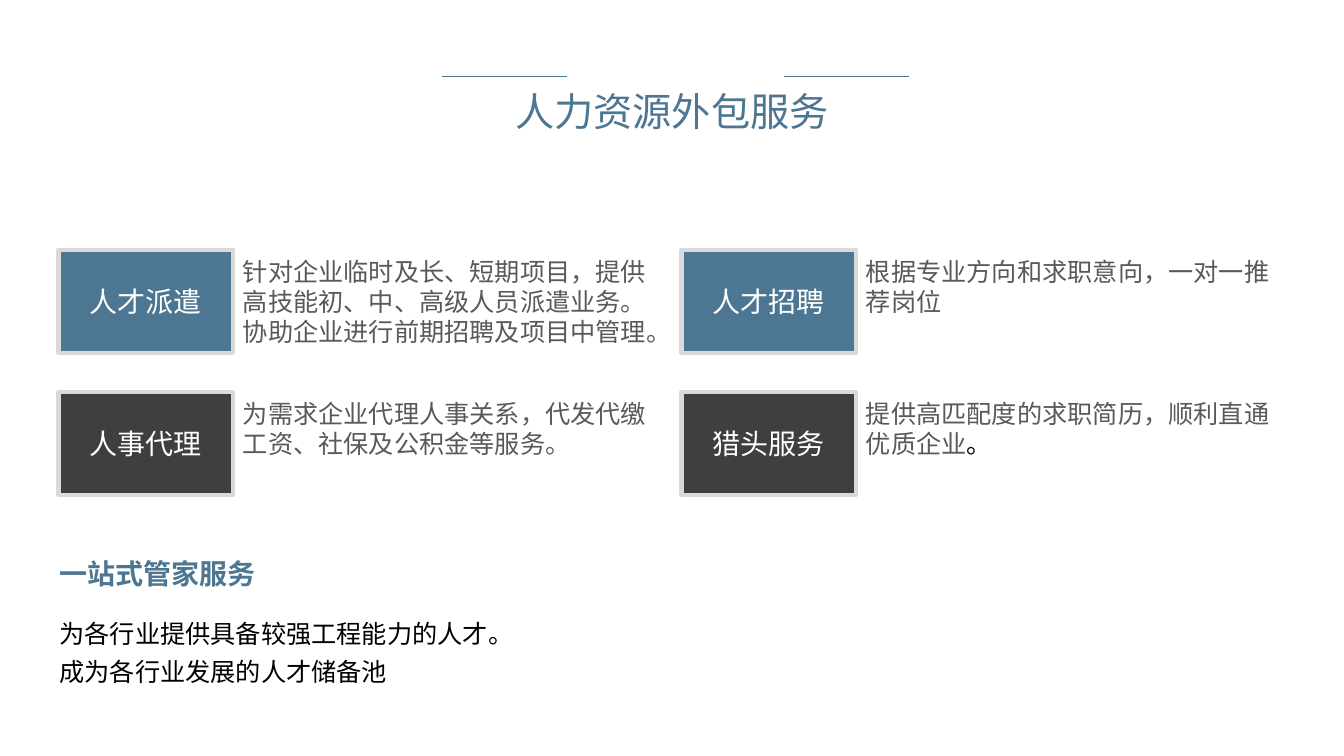
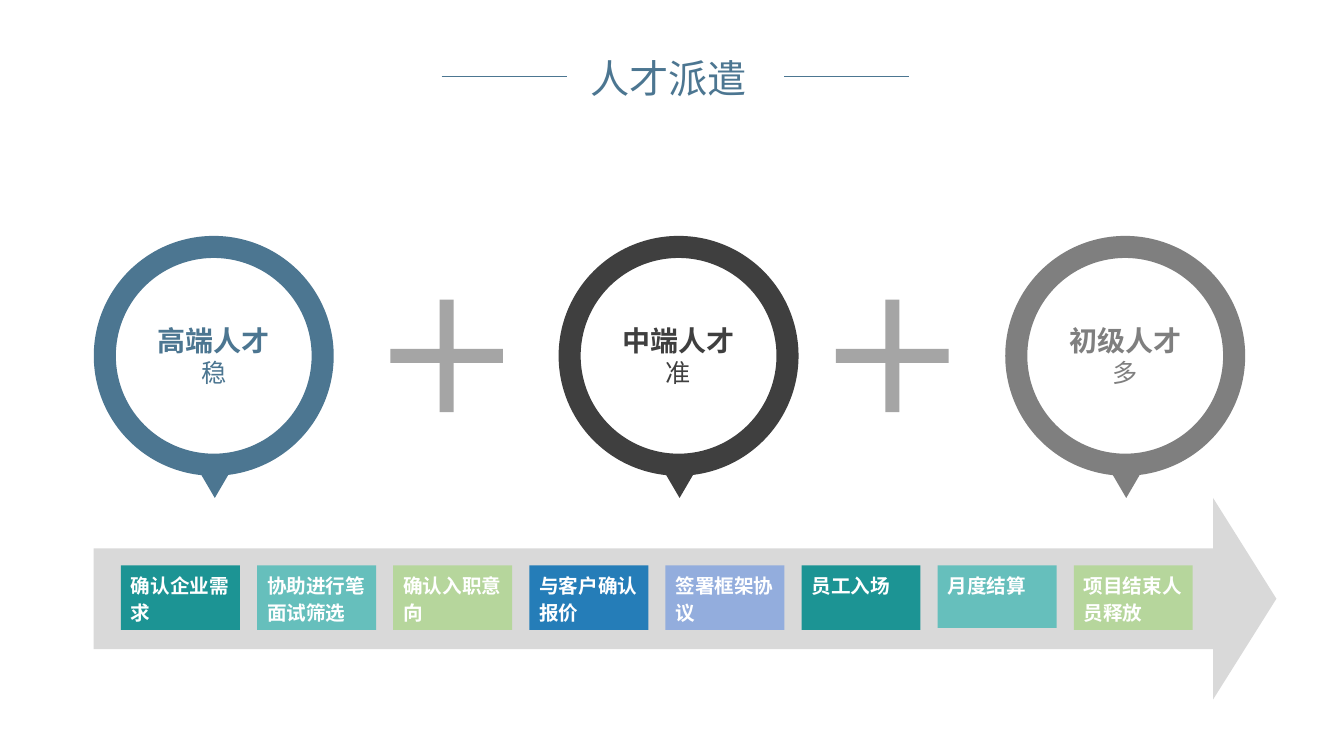
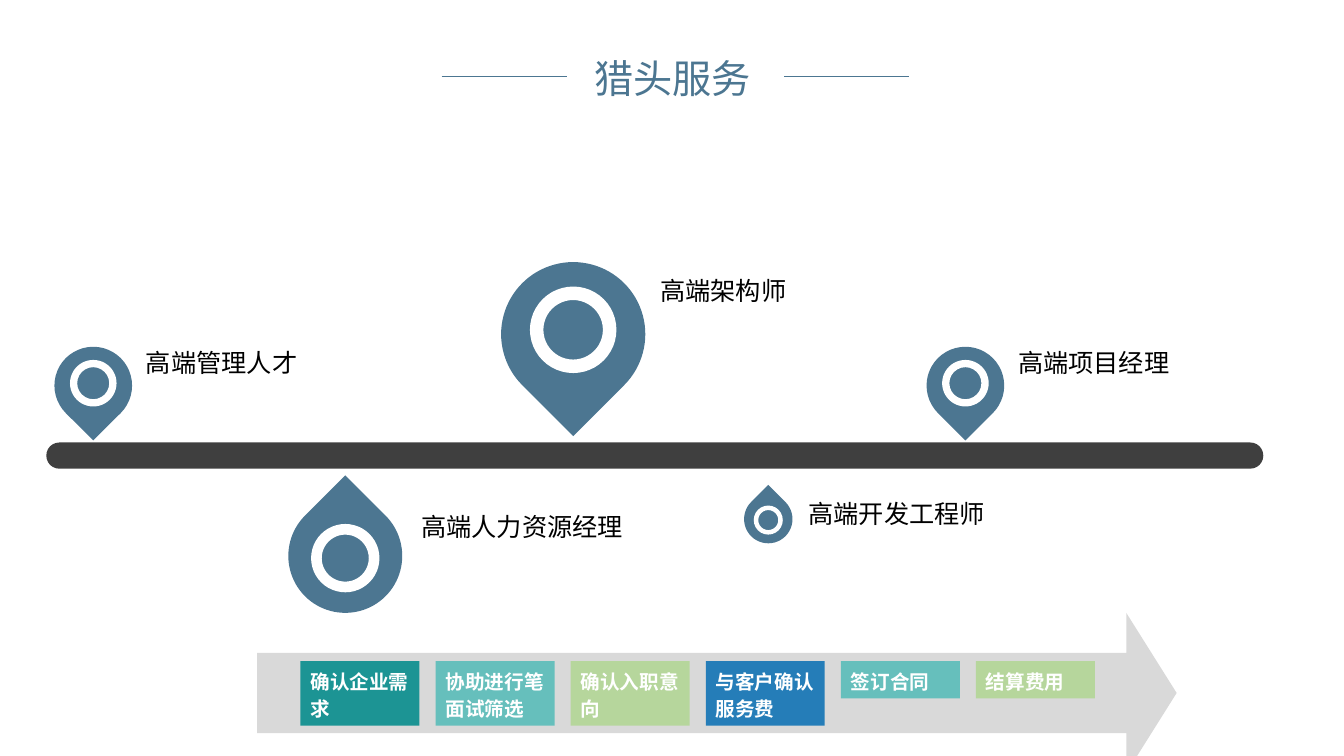
"""Build three slides about human resources outsourcing services."""
import lxml.etree
import pptx
import pptx.dml.color
import pptx.enum.shapes
import pptx.enum.text
import pptx.oxml.ns
import pptx.util

Inches = pptx.util.Inches
Pt = pptx.util.Pt
RGBColor = pptx.dml.color.RGBColor
SHAPE = pptx.enum.shapes.MSO_SHAPE
ALIGN = pptx.enum.text.PP_ALIGN
ANCHOR = pptx.enum.text.MSO_ANCHOR

BLUE = RGBColor(0x4C, 0x76, 0x91)
CHARCOAL = RGBColor(0x3F, 0x3F, 0x3F)
MID_GRAY = RGBColor(0x7F, 0x7F, 0x7F)
PLUS_GRAY = RGBColor(0xA5, 0xA5, 0xA5)
LIGHT_GRAY = RGBColor(0xD9, 0xD9, 0xD9)
TEXT_GRAY = RGBColor(0x59, 0x59, 0x59)
BLACK = RGBColor(0, 0, 0)
WHITE = RGBColor(0xFF, 0xFF, 0xFF)
TEAL = RGBColor(0x1C, 0x94, 0x94)
AQUA = RGBColor(0x66, 0xBF, 0xBC)
GREEN = RGBColor(0xB6, 0xD6, 0x9C)
STRONG_BLUE = RGBColor(0x25, 0x7D, 0xB8)
LAVENDER = RGBColor(0x93, 0xAD, 0xDD)

CJK_FONT = "Noto Sans CJK SC"
LATIN_FONT = "Calibri"
LINE_HEIGHT = 1.2


def add_run(paragraph, text, size, color, bold=False, font=CJK_FONT):
    """Append one formatted run to a paragraph."""
    run = paragraph.add_run()
    run.text = text
    run.font.size = Pt(size)
    run.font.bold = bold
    run.font.color.rgb = color
    run.font.name = font
    properties = run._r.get_or_add_rPr()
    east_asian = lxml.etree.SubElement(properties, pptx.oxml.ns.qn("a:ea"))
    east_asian.set("typeface", CJK_FONT)


def write(shape, lines, size, color, bold=False, align=ALIGN.LEFT,
          anchor=ANCHOR.TOP, side=0.1, edge=0.05, leading=LINE_HEIGHT, before=0):
    """Fill a shape with one paragraph for each line."""
    frame = shape.text_frame
    frame.word_wrap = True
    frame.auto_size = pptx.enum.text.MSO_AUTO_SIZE.NONE
    frame.vertical_anchor = anchor
    frame.margin_left = frame.margin_right = Inches(side)
    frame.margin_top = frame.margin_bottom = Inches(edge)
    for index, line in enumerate(lines):
        paragraph = frame.add_paragraph() if index else frame.paragraphs[0]
        paragraph.alignment = align
        paragraph.line_spacing = Pt(round(size * leading, 1))
        paragraph.space_before = Pt(before if index else 0)
        add_run(paragraph, line, size, color, bold)
    return frame


def add_text(slide, box, lines, size, color, **style):
    """Add a text box."""
    label = slide.shapes.add_textbox(*map(Inches, box))
    return write(label, lines, size, color, **style)


def add_figure(shapes, kind, box, color, adjust=(), rotation=0):
    """Add a flat preset shape without outline or shadow."""
    figure = shapes.add_shape(kind, *map(Inches, box))
    figure.shadow.inherit = False
    figure.fill.solid()
    figure.fill.fore_color.rgb = color
    figure.line.fill.background()
    figure.rotation = rotation
    for index, value in enumerate(adjust):
        figure.adjustments[index] = value
    return figure


def add_rule(slide, start, end):
    """Add a thin horizontal rule beside the title."""
    rule = slide.shapes.add_connector(
        pptx.enum.shapes.MSO_CONNECTOR.STRAIGHT,
        Inches(start), Inches(0.76), Inches(end), Inches(0.76))
    rule.line.color.rgb = BLUE
    rule.line.width = Pt(0.5)
    lxml.etree.SubElement(rule._element.spPr, pptx.oxml.ns.qn("a:effectLst"))


def start_slide(deck, title, box):
    """Add a slide with its title and the two rules."""
    slide = deck.slides.add_slide(deck.slide_layouts[5])
    add_rule(slide, 4.38, 5.62)
    add_rule(slide, 7.78, 9.02)
    heading = slide.shapes.title
    heading.left, heading.top, heading.width, heading.height = map(Inches, box)
    write(heading, [title], 28, BLUE, align=ALIGN.CENTER, anchor=ANCHOR.MIDDLE)
    return slide


def add_service(slide, left, top, name, description, color, ending=""):
    """Add a framed service name with its description to the right."""
    card = add_figure(slide.shapes, SHAPE.RECTANGLE, (left, top, 1.73, 1.02), color)
    card.line.color.rgb = LIGHT_GRAY
    card.line.width = Pt(3)
    write(card, [name], 20, WHITE, align=ALIGN.CENTER, anchor=ANCHOR.MIDDLE)
    frame = add_text(slide, (left + 1.73, top + 0.01, 4.32, 1.31), [], 18, TEXT_GRAY)
    paragraph = frame.paragraphs[0]
    paragraph.line_spacing = Pt(18 * LINE_HEIGHT)
    add_run(paragraph, description, 18, TEXT_GRAY, font=LATIN_FONT)
    if ending:
        add_run(paragraph, ending, 18, BLACK)


def add_talent_ring(slide, left, level, quality, color):
    """Add a ring with a pointer below and two lines of text inside."""
    add_figure(slide.shapes, SHAPE.ISOSCELES_TRIANGLE,
               (left + 0.99, 4.58, 0.42, 0.36), color, rotation=180)
    ring = add_figure(slide.shapes, SHAPE.DONUT, (left, 2.34, 2.38, 2.38), color, [0.092])
    frame = write(ring, [level], 20, color, bold=True, align=ALIGN.CENTER,
                  anchor=ANCHOR.MIDDLE, side=0, edge=0)
    second = frame.add_paragraph()
    second.alignment = ALIGN.CENTER
    second.line_spacing = Pt(18 * LINE_HEIGHT)
    add_run(second, quality, 18, color)


def add_process(slide, arrow_box, left, top, pitch, steps):
    """Add a wide arrow carrying evenly spaced steps."""
    add_figure(slide.shapes, SHAPE.RIGHT_ARROW, arrow_box, LIGHT_GRAY, [0.5, 0.314])
    for index, (step, color, height) in enumerate(steps):
        box = (left + index * pitch, top, 1.18, height)
        chip = add_figure(slide.shapes, SHAPE.RECTANGLE, box, color)
        write(chip, [step], 14, WHITE, bold=True, leading=1.38)


def add_pin(slide, left, top, size, role, label_left, label_top, above=True):
    """Add a map pin pointing at the timeline, with its role."""
    pin = slide.shapes.add_group_shape()
    add_figure(pin.shapes, SHAPE.TEAR, (left, top, size, size), BLUE,
               rotation=135 if above else 315)
    inner = 0.6 * size
    inset = (size - inner) / 2
    shift = -0.03 * size if above else 0.02 * size
    add_figure(pin.shapes, SHAPE.DONUT,
               (left + inset, top + inset + shift, inner, inner), WHITE, [0.156])
    add_text(slide, (label_left, label_top, 2.73, 0.4), [role], 18, BLACK)


def build_services(deck):
    """Build the overview of the four services."""
    slide = start_slide(deck, "人力资源外包服务", (4.91, 0.81, 3.51, 0.57))
    services = [
        ("人才派遣", "针对企业临时及长、短期项目，提供高技能初、中、高级人员派遣业务。"
                 "协助企业进行前期招聘及项目中管理。", ""),
        ("人才招聘", "根据专业方向和求职意向，一对一推荐岗位", ""),
        ("人事代理", "为需求企业代理人事关系，代发代缴工资、社保及公积金等服务。", ""),
        ("猎头服务", "提供高匹配度的求职简历，顺利直通优质企业", "。"),
    ]
    for index, (name, description, ending) in enumerate(services):
        row, column = divmod(index, 2)
        add_service(slide, 0.58 + 6.18 * column, 2.48 + 1.41 * row, name,
                    description, (BLUE, CHARCOAL)[row], ending)
    add_text(slide, (0.59, 5.47, 4.15, 0.44), ["一站式管家服务"], 20, BLUE,
             bold=True, side=0)
    add_text(slide, (0.59, 6.08, 11.69, 0.79),
             ["为各行业提供具备较强工程能力的人才。", "成为各行业发展的人才储备池"],
             18, BLACK, side=0, before=6)


def build_dispatch(deck):
    """Build the talent dispatch slide."""
    slide = start_slide(deck, "人才派遣", (5.54, 0.49, 2.18, 0.57))
    for left, level, quality, color in [
        (0.93, "高端人才", "稳", BLUE),
        (5.54, "中端人才", "准", CHARCOAL),
        (9.97, "初级人才", "多", MID_GRAY),
    ]:
        add_talent_ring(slide, left, level, quality, color)
    for left in (3.67, 8.09):
        add_figure(slide.shapes, SHAPE.MATH_PLUS, (left, 2.77, 1.52, 1.52),
                   PLUS_GRAY, [0.091])
    add_process(slide, (0.93, 4.94, 11.73, 2), 1.2, 5.61, 1.35, [
        ("确认企业需求", TEAL, 0.64),
        ("协助进行笔面试筛选", AQUA, 0.64),
        ("确认入职意向", GREEN, 0.64),
        ("与客户确认报价", STRONG_BLUE, 0.64),
        ("签署框架协议", LAVENDER, 0.64),
        ("员工入场", TEAL, 0.64),
        ("月度结算", AQUA, 0.62),
        ("项目结束人员释放", GREEN, 0.64),
    ])


def build_headhunting(deck):
    """Build the headhunting slide."""
    slide = start_slide(deck, "猎头服务", (5.58, 0.49, 2.18, 0.57))
    add_figure(slide.shapes, SHAPE.ROUNDED_RECTANGLE, (0.46, 4.39, 12.07, 0.26),
               CHARCOAL, [0.494])
    add_pin(slide, 0.54, 3.44, 0.77, "高端管理人才", 1.35, 3.4)
    add_pin(slide, 4.97, 2.6, 1.43, "高端架构师", 6.45, 2.68)
    add_pin(slide, 2.86, 4.95, 1.13, "高端人力资源经理", 4.08, 5.02, above=False)
    add_pin(slide, 7.38, 4.91, 0.48, "高端开发工程师", 7.92, 4.89, above=False)
    add_pin(slide, 9.19, 3.44, 0.77, "高端项目经理", 10, 3.4)
    add_process(slide, (2.55, 6.08, 9.12, 1.59), 2.98, 6.56, 1.34, [
        ("确认企业需求", TEAL, 0.64),
        ("协助进行笔面试筛选", AQUA, 0.64),
        ("确认入职意向", GREEN, 0.64),
        ("与客户确认服务费", STRONG_BLUE, 0.64),
        ("签订合同", AQUA, 0.37),
        ("结算费用", GREEN, 0.37),
    ])


def main():
    """Build and save the presentation."""
    deck = pptx.Presentation()
    deck.slide_width = Inches(13.33)
    deck.slide_height = Inches(7.5)
    build_services(deck)
    build_dispatch(deck)
    build_headhunting(deck)
    deck.save("out.pptx")


if __name__ == "__main__":
    main()
